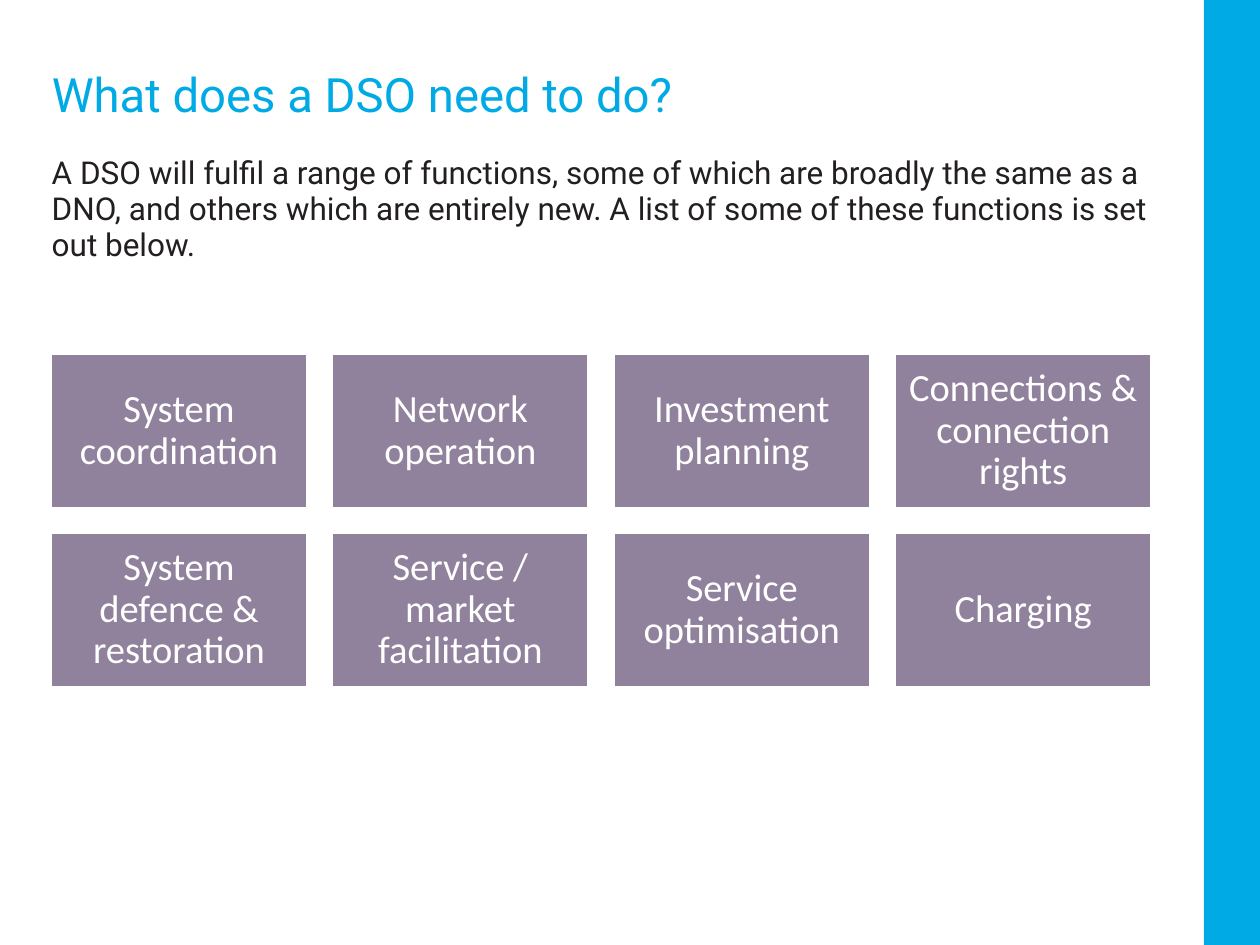
import pptx
import pptx.util
from pptx.dml.color import RGBColor
from pptx.enum.shapes import MSO_SHAPE
from pptx.enum.text import MSO_ANCHOR, MSO_AUTO_SIZE, PP_ALIGN

Pt = pptx.util.Pt

TITLE = "What does a DSO need to do?"
INTRO = (
    "A DSO will fulfil a range of functions, some of which are broadly the same "
    "as a DNO, and others which are entirely new. A list of some of these "
    "functions is set out below."
)
FUNCTIONS = [
    ["System coordination", "Network operation", "Investment planning",
     "Connections & connection rights"],
    ["System defence & restoration", "Service / market facilitation",
     "Service optimisation", "Charging"],
]

BLUE, INK, MAUVE, WHITE = "00AAE4", "231F20", "90829C", "FFFFFF"
SLIDE_WIDTH, SLIDE_HEIGHT = 720, 540
BAND_WIDTH = 32
TEXT_LEFT, TEXT_WIDTH = 29.6, 628.6
GRID_LEFT, GRID_TOP = 29.2, 202.4
BOX_WIDTH, BOX_HEIGHT, GAP = 146.2, 87.7, 14.6


def color(hex_string):
    return RGBColor.from_string(hex_string)


def write(shape, text, font_name, size, hex_color, line_spacing,
          align=PP_ALIGN.LEFT, anchor=MSO_ANCHOR.TOP, margin=0):
    frame = shape.text_frame
    frame.word_wrap = True
    frame.auto_size = MSO_AUTO_SIZE.NONE
    frame.vertical_anchor = anchor
    frame.margin_left = frame.margin_right = Pt(margin)
    frame.margin_top = frame.margin_bottom = Pt(margin)
    frame.text = text
    paragraph = frame.paragraphs[0]
    paragraph.alignment = align
    paragraph.line_spacing = line_spacing
    paragraph.space_before = Pt(0)
    paragraph.font.name = font_name
    paragraph.font.size = Pt(size)
    paragraph.font.color.rgb = color(hex_color)


def add_rectangle(slide, left, top, width, height, fill, line=None):
    rectangle = slide.shapes.add_shape(
        MSO_SHAPE.RECTANGLE, Pt(left), Pt(top), Pt(width), Pt(height))
    rectangle.shadow.inherit = False
    rectangle.fill.solid()
    rectangle.fill.fore_color.rgb = color(fill)
    if line:
        rectangle.line.color.rgb = color(line)
        rectangle.line.width = Pt(1)
    else:
        rectangle.line.fill.background()
    return rectangle


def main():
    deck = pptx.Presentation()
    deck.slide_width, deck.slide_height = Pt(SLIDE_WIDTH), Pt(SLIDE_HEIGHT)
    slide = deck.slides.add_slide(deck.slide_layouts.get_by_name("Title Only"))

    add_rectangle(slide, SLIDE_WIDTH - BAND_WIDTH, 0, BAND_WIDTH, SLIDE_HEIGHT, BLUE)

    title = slide.shapes.title
    title.left, title.top = Pt(TEXT_LEFT), Pt(42.5)
    title.width, title.height = Pt(TEXT_WIDTH), Pt(42)
    write(title, TITLE, "Roboto", 27, BLUE, 0.85)

    intro = slide.shapes.add_textbox(
        Pt(TEXT_LEFT), Pt(89.3), Pt(TEXT_WIDTH), Pt(62))
    write(intro, INTRO, "Roboto", 18, INK, 0.95)

    for row, labels in enumerate(FUNCTIONS):
        for column, label in enumerate(labels):
            box = add_rectangle(
                slide,
                GRID_LEFT + column * (BOX_WIDTH + GAP),
                GRID_TOP + row * (BOX_HEIGHT + GAP),
                BOX_WIDTH, BOX_HEIGHT, MAUVE, WHITE)
            write(box, label, "Calibri", 22, WHITE, 0.9,
                  PP_ALIGN.CENTER, MSO_ANCHOR.MIDDLE, 6.6)

    deck.save("out.pptx")


if __name__ == "__main__":
    main()
